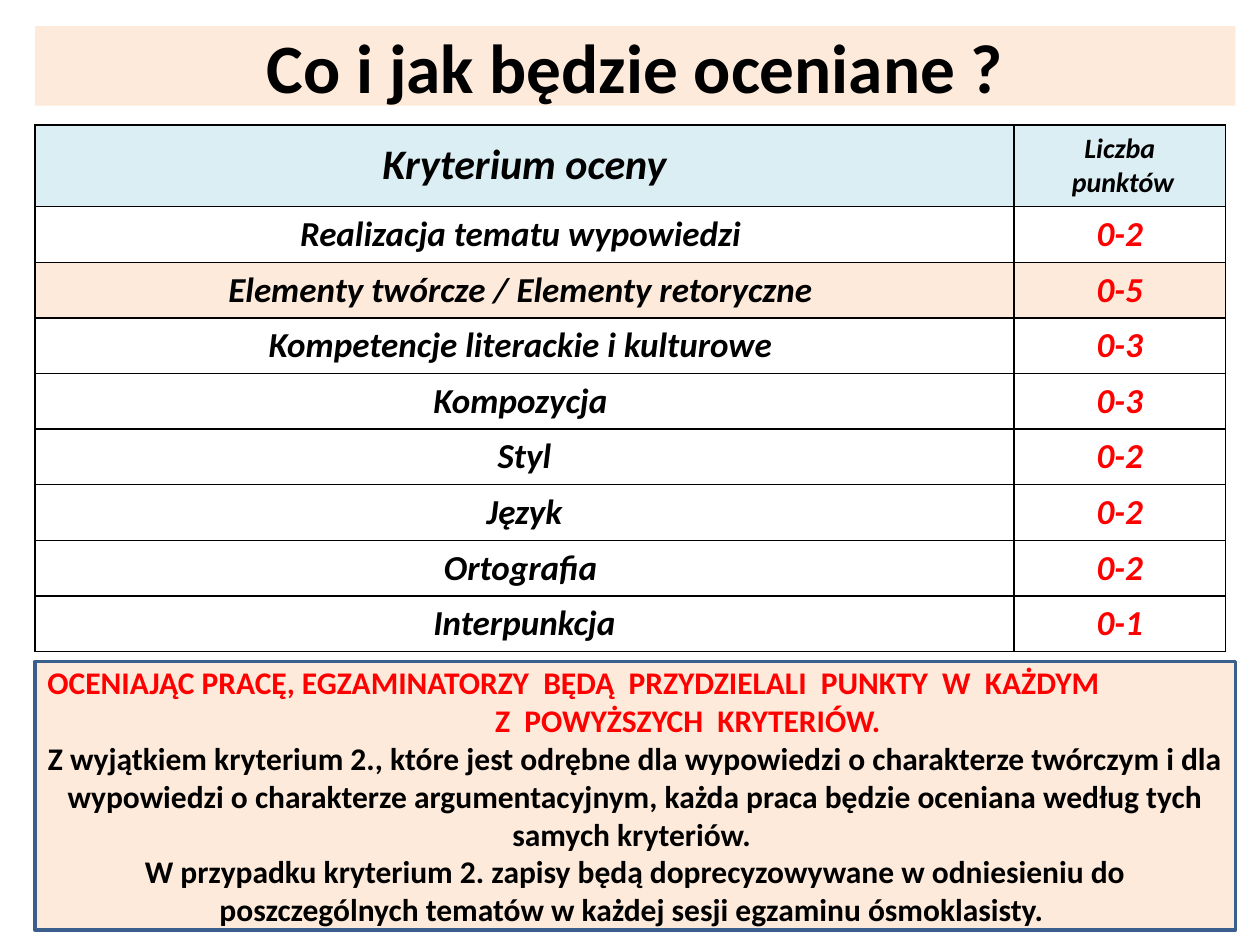
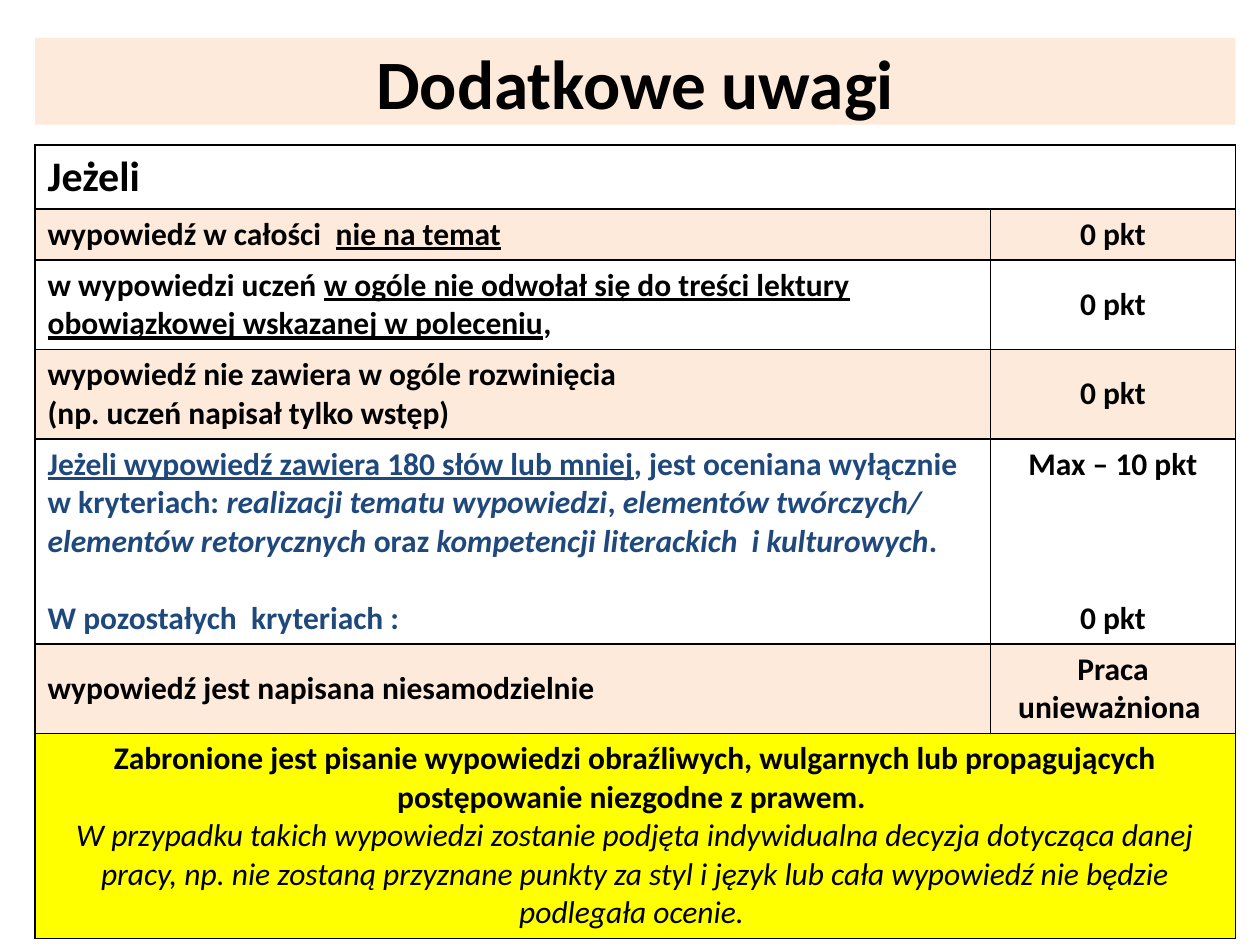
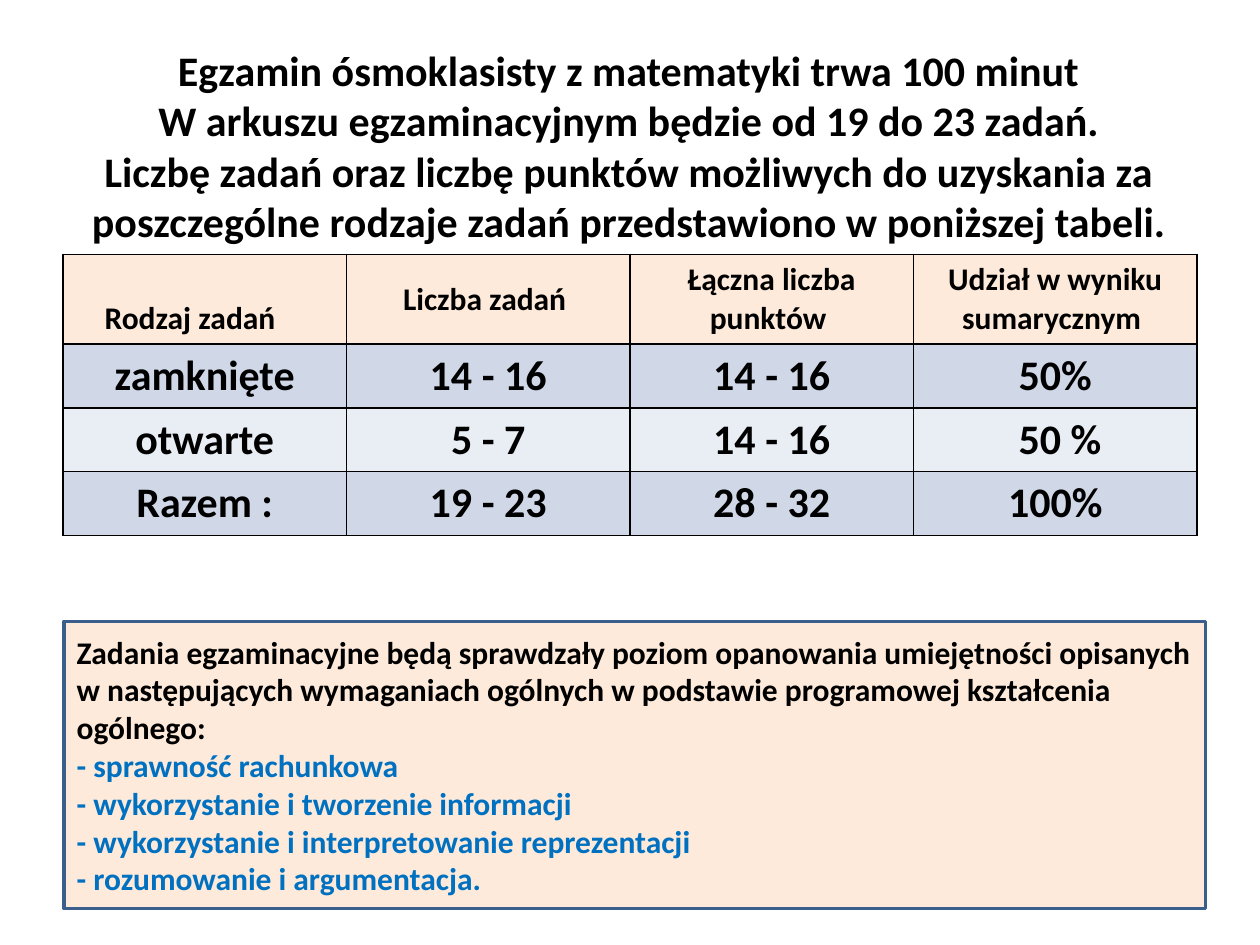
from collections import namedtuple

from lxml.etree import SubElement
from pptx import Presentation
from pptx.dml.color import RGBColor
from pptx.enum.shapes import MSO_SHAPE as Shape
from pptx.enum.text import MSO_ANCHOR as Anchor, PP_ALIGN as Align
from pptx.oxml.ns import qn
from pptx.util import Pt

BLACK = RGBColor(0x00, 0x00, 0x00)
WHITE = RGBColor(0xFF, 0xFF, 0xFF)
RED = RGBColor(0xFF, 0x00, 0x00)
YELLOW = RGBColor(0xFF, 0xFF, 0x00)
PEACH = RGBColor(0xFD, 0xEA, 0xDA)
ICE = RGBColor(0xDB, 0xEE, 0xF4)
NAVY = RGBColor(0x1F, 0x49, 0x7D)
FRAME_BLUE = RGBColor(0x3A, 0x5F, 0x8C)
SKILL_BLUE = RGBColor(0x00, 0x70, 0xC0)
BAND_DARK = RGBColor(0xD0, 0xD8, 0xE8)
BAND_LIGHT = RGBColor(0xE9, 0xED, 0xF4)

FONT = "Calibri"
TITLE_SIZE = 39.6
LINE = 22
UNDERLINED = {"underline": True}
ITALIC = {"italic": True}

Box = namedtuple("Box", "left top width height")

CRITERIA = [
    ("Realizacja tematu wypowiedzi ", "0-2"),
    ("Elementy twórcze / Elementy retoryczne ", "0-5"),
    ("Kompetencje literackie i kulturowe ", "0-3"),
    ("Kompozycja ", "0-3"),
    ("Styl", "0-2"),
    ("Język", "0-2"),
    ("Ortografia ", "0-2"),
    ("Interpunkcja", "0-1"),
]

TASK_HEADINGS = ["Rodzaj zadań", "Liczba zadań ", "Łączna liczba punktów ",
                 "Udział w wyniku sumarycznym "]
TASK_COUNTS = [
    ("zamknięte", "14 - 16", "14 - 16", "50%"),
    ("otwarte", "5 - 7", "14 - 16", " 50 %"),
    ("Razem :", "19 - 23", "28 - 32", "100%"),
]
SKILLS = ["sprawność rachunkowa", "wykorzystanie i tworzenie informacji",
          "wykorzystanie i interpretowanie reprezentacji", "rozumowanie i argumentacja."]


def add_text(frame, *parts, align=Align.CENTER, before=0, indent=0, **style):
    """Add one paragraph; a part is a string or a (string, style) pair."""
    first = frame.paragraphs[0]
    paragraph = frame.add_paragraph() if first.runs else first
    paragraph.alignment = align
    paragraph.space_before = Pt(before)
    if indent:
        paragraph._p.get_or_add_pPr().set("marL", str(Pt(indent)))
    for part in parts:
        words, own = (part, {}) if isinstance(part, str) else part
        look = {"size": 18, "color": BLACK, "bold": True, **style, **own}
        run = paragraph.add_run()
        run.text = words
        font = run.font
        font.name = FONT
        font.size = Pt(look["size"])
        font.color.rgb = look["color"]
        font.bold = look["bold"]
        font.italic = look.get("italic", False)
        font.underline = look.get("underline", False)


def add_panel(slide, box, outline=None):
    """Add a peach rectangle and return its text frame."""
    panel = slide.shapes.add_shape(Shape.RECTANGLE, *map(Pt, box))
    panel.shadow.inherit = False
    panel.fill.solid()
    panel.fill.fore_color.rgb = PEACH
    if outline:
        panel.line.color.rgb = outline
        panel.line.width = Pt(2)
    else:
        panel.line.fill.background()
    frame = panel.text_frame
    frame.word_wrap = True
    frame.vertical_anchor = Anchor.MIDDLE
    return frame


def add_title_band(slide, box, title):
    """Add the peach band with the slide title."""
    add_text(add_panel(slide, box), title, size=TITLE_SIZE)


def style_cell(cell, fill, anchor=Anchor.MIDDLE):
    """Give a cell its fill, anchor and black borders."""
    cell.vertical_anchor = anchor
    props = cell._tc.get_or_add_tcPr()
    for side in ("a:lnL", "a:lnR", "a:lnT", "a:lnB"):
        border = SubElement(props, qn(side), w=str(Pt(1)))
        SubElement(SubElement(border, qn("a:solidFill")), qn("a:srgbClr"), val=str(BLACK))
    cell.fill.solid()
    cell.fill.fore_color.rgb = fill


def add_grid(slide, box, widths, heights, row_fills):
    """Add a table whose rows have the given heights and fills."""
    grid = slide.shapes.add_table(len(heights), len(widths), *map(Pt, box)).table
    grid.first_row = grid.horz_banding = False
    for column, width in zip(grid.columns, widths):
        column.width = Pt(width)
    for row, height, fill in zip(grid.rows, heights, row_fills):
        row.height = Pt(height)
        for cell in row.cells:
            style_cell(cell, fill)
    return grid


def add_criteria_table(slide, box):
    """List the marking criteria with their points."""
    points_width, header_height = 121, 46.8
    row_height = (box.height - header_height) / len(CRITERIA)
    fills = [ICE] + [PEACH if "retoryczne" in name else WHITE for name, _ in CRITERIA]
    grid = add_grid(slide, box, [box.width - points_width, points_width],
                    [header_height] + [row_height] * len(CRITERIA), fills)
    add_text(grid.cell(0, 0).text_frame, "Kryterium oceny", size=24, italic=True)
    for word in ("Liczba", " punktów"):
        add_text(grid.cell(0, 1).text_frame, word, size=16, italic=True)
    for row, (name, points) in enumerate(CRITERIA, 1):
        add_text(grid.cell(row, 0).text_frame, name, size=20, italic=True)
        add_text(grid.cell(row, 1).text_frame, points, size=20, italic=True, color=RED)


def add_marking_note(slide, box):
    """Explain how the examiners award points."""
    note = add_panel(slide, box, FRAME_BLUE)
    add_text(note, "OCENIAJĄC PRACĘ, EGZAMINATORZY  BĘDĄ  PRZYDZIELALI  PUNKTY  W  KAŻDYM",
             color=RED, align=Align.LEFT)
    add_text(note, "Z  POWYŻSZYCH  KRYTERIÓW.", color=RED, indent=60)
    add_text(note, "Z wyjątkiem kryterium 2., które jest odrębne dla wypowiedzi o charakterze "
                   "twórczym i dla wypowiedzi o charakterze argumentacyjnym, każda praca będzie "
                   "oceniana według tych samych kryteriów. ")
    add_text(note, "W przypadku kryterium 2. zapisy będą doprecyzowywane w odniesieniu do "
                   "poszczególnych tematów w każdej sesji egzaminu ósmoklasisty. ")


def add_remarks_table(slide, box):
    """List the cases in which points are limited or withheld."""
    score_width = 140
    heights = [36.5, 29.2, 51, 51, 117, 51, 117]
    fills = [WHITE, PEACH, WHITE, PEACH, WHITE, PEACH, YELLOW]
    grid = add_grid(slide, box, [box.width - score_width, score_width], heights, fills)
    for row in (0, len(heights) - 1):
        grid.cell(row, 0).merge(grid.cell(row, 1))
    cases = [grid.cell(row, 0).text_frame for row in range(len(heights))]
    scores = [grid.cell(row, 1).text_frame for row in range(len(heights))]

    add_text(cases[0], "Jeżeli", size=24, align=Align.LEFT)
    add_text(cases[1], "wypowiedź w całości  ", ("nie na temat", UNDERLINED), align=Align.LEFT)
    add_text(cases[2], "w wypowiedzi uczeń ",
             ("w ogóle nie odwołał się do treści lektury obowiązkowej wskazanej w poleceniu",
              UNDERLINED), ",", align=Align.LEFT)
    add_text(cases[3], "wypowiedź nie zawiera w ogóle rozwinięcia", align=Align.LEFT)
    add_text(cases[3], "(np. uczeń napisał tylko wstęp)", align=Align.LEFT)
    add_text(cases[4], ("Jeżeli wypowiedź zawiera 180 słów lub mniej", UNDERLINED),
             ", jest oceniana wyłącznie w kryteriach: ",
             ("realizacji tematu wypowiedzi", ITALIC), ", ",
             ("elementów twórczych/ elementów retorycznych ", ITALIC), "oraz ",
             ("kompetencji literackich  i kulturowych", ITALIC), ".",
             color=NAVY, align=Align.LEFT)
    add_text(cases[4], "W pozostałych  kryteriach :", color=NAVY, align=Align.LEFT, before=LINE)
    add_text(cases[5], "wypowiedź jest napisana niesamodzielnie", align=Align.LEFT)
    add_text(cases[6], "Zabronione jest pisanie wypowiedzi obraźliwych, wulgarnych lub "
                       "propagujących postępowanie niezgodne z prawem. ")
    add_text(cases[6], "W przypadku takich wypowiedzi zostanie podjęta indywidualna decyzja "
                       "dotycząca danej pracy, np. nie zostaną przyznane punkty za styl i język "
                       "lub cała wypowiedź nie będzie podlegała ocenie. ", bold=False, italic=True)

    for score in scores[1:4]:
        add_text(score, "0 pkt")
    add_text(scores[4], "Max – 10 pkt")
    add_text(scores[4], "0 pkt", before=3 * LINE)
    add_text(scores[5], "Praca unieważniona ")


def add_maths_intro(slide, box):
    """Introduce the mathematics exam."""
    intro = slide.shapes.add_textbox(*map(Pt, box)).text_frame
    intro.word_wrap = True
    intro.vertical_anchor = Anchor.MIDDLE
    for sentence in ("Egzamin ósmoklasisty z matematyki trwa 100 minut",
                     "W arkuszu egzaminacyjnym będzie od 19 do 23 zadań.",
                     "Liczbę zadań oraz liczbę punktów możliwych do uzyskania za "
                     "poszczególne rodzaje zadań przedstawiono w poniższej tabeli."):
        add_text(intro, sentence, size=24)


def add_tasks_table(slide, box):
    """Show the number of tasks and points by task type."""
    columns, header_height = len(TASK_HEADINGS), 51.2
    row_height = (box.height - header_height) / len(TASK_COUNTS)
    grid = add_grid(slide, box, [box.width / columns] * columns,
                    [header_height] + [row_height] * len(TASK_COUNTS),
                    [PEACH, BAND_DARK, BAND_LIGHT, BAND_DARK])
    for row, values in enumerate([TASK_HEADINGS] + TASK_COUNTS):
        for column, value in enumerate(values):
            add_text(grid.cell(row, column).text_frame, value, size=24 if row else 18)
    task_type = grid.cell(0, 0)
    task_type.vertical_anchor = Anchor.BOTTOM
    task_type.margin_right = Pt(24)


def add_skills_note(slide, box):
    """List the skills that the tasks check."""
    note = add_panel(slide, box, FRAME_BLUE)
    add_text(note, "Zadania egzaminacyjne będą sprawdzały poziom opanowania umiejętności "
                   "opisanych w następujących wymaganiach ogólnych w podstawie programowej "
                   "kształcenia ogólnego:", align=Align.LEFT)
    for skill in SKILLS:
        add_text(note, f"- {skill}", color=SKILL_BLUE, align=Align.LEFT)


def main():
    """Build the three slides."""
    deck = Presentation()
    deck.slide_width, deck.slide_height = Pt(720), Pt(540)
    criteria, remarks, maths = (deck.slides.add_slide(deck.slide_layouts[6]) for _ in range(3))

    add_title_band(criteria, Box(20, 15, 686, 45.4), "Co i jak będzie oceniane ?")
    add_criteria_table(criteria, Box(20, 71.3, 680.4, 301.2))
    add_marking_note(criteria, Box(20, 378, 686, 153.4))

    add_title_band(remarks, Box(20, 21.6, 686, 49.7), "Dodatkowe uwagi")
    add_remarks_table(remarks, Box(20, 82.8, 686, 452.7))

    add_maths_intro(maths, Box(35.3, 15, 648, 136))
    add_tasks_table(maths, Box(36, 145.4, 648, 160.7))
    add_skills_note(maths, Box(36.7, 355, 652.3, 164.2))

    deck.save("out.pptx")


if __name__ == "__main__":
    main()
